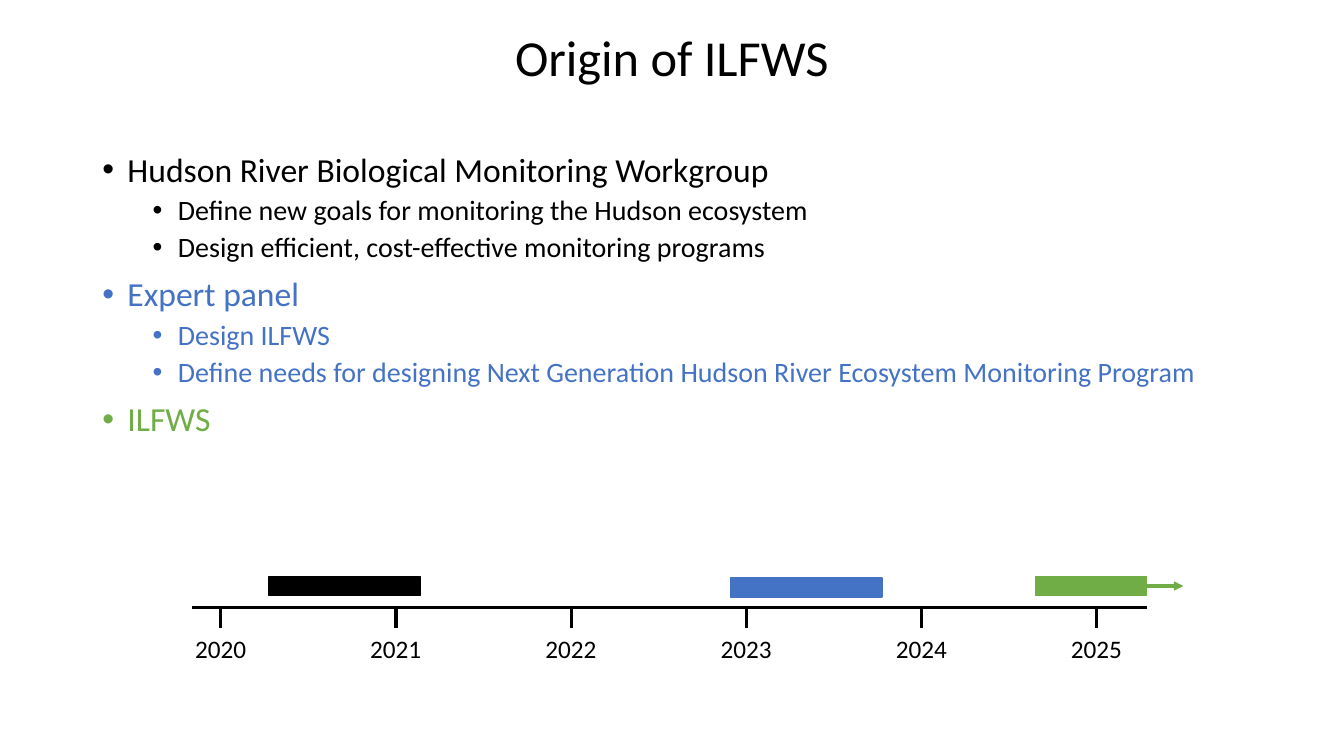
from lxml import etree
from pptx import Presentation
from pptx.dml.color import RGBColor
from pptx.enum.shapes import MSO_CONNECTOR, MSO_SHAPE
from pptx.enum.text import MSO_ANCHOR, MSO_AUTO_SIZE, PP_ALIGN
from pptx.oxml.ns import qn
from pptx.util import Pt

LINE, RECT = MSO_CONNECTOR.STRAIGHT, MSO_SHAPE.RECTANGLE
MIDDLE, CENTER = MSO_ANCHOR.MIDDLE, PP_ALIGN.CENTER
GROW = MSO_AUTO_SIZE.SHAPE_TO_FIT_TEXT
BLACK, BLUE, GREEN = "000000", "4472C4", "70AD47"
RIGHT = 3

ITEMS = [
    (0, BLACK, "Hudson River Biological Monitoring Workgroup"),
    (1, BLACK, "Define new goals for monitoring the Hudson ecosystem"),
    (1, BLACK, "Design efficient, cost-effective monitoring programs"),
    (0, BLUE, "Expert panel"),
    (1, BLUE, "Design ILFWS"),
    (1, BLUE, "Define needs for designing Next Generation Hudson River "
              "Ecosystem Monitoring Program"),
    (0, GREEN, "ILFWS"),
]
LEVELS = [
    {"size": 24, "space": 10, "left": 18},
    {"size": 20, "space": 5, "left": 54},
]
AXIS_Y, TICK = 434.2, 14.4
FIRST_X, YEAR_W = 157.7, 125.14
YEARS = range(2020, 2026)


def color(code):
    return RGBColor.from_string(code)


def apply(item, form):
    for name, value in form.items():
        setattr(item, name, value)


def add_box(slide, x, y, w, h, **form):
    """Add a text box; form holds text frame attributes."""
    frame = slide.shapes.add_textbox(Pt(x), Pt(y), Pt(w), Pt(h)).text_frame
    apply(frame, {"word_wrap": True, **form})
    return frame


def write(para, text, size, code=BLACK, **form):
    """Fill a paragraph; form holds paragraph attributes."""
    run = para.add_run()
    run.text = text
    apply(run.font, {"name": "Calibri", "size": Pt(size)})
    run.font.color.rgb = color(code)
    apply(para, form)


def add_bullet(para, left):
    props = para._p.get_or_add_pPr()
    props.set("marL", str(Pt(left)))
    props.set("indent", str(-Pt(18)))
    font = etree.SubElement(props, qn("a:buFont"))
    font.set("typeface", "Arial")
    etree.SubElement(props, qn("a:buChar")).set("char", "•")


def add_list(slide):
    frame = add_box(slide, 66, 105.8, 828, 230.4)
    for i, (level, code, text) in enumerate(ITEMS):
        para = frame.add_paragraph() if i else frame.paragraphs[0]
        form = LEVELS[level]
        write(para, text, form["size"], code, level=level,
              line_spacing=0.9, space_before=Pt(form["space"]))
        add_bullet(para, form["left"])


def add_line(slide, x1, y1, x2, y2, code=BLACK):
    line = slide.shapes.add_connector(LINE, Pt(x1), Pt(y1), Pt(x2), Pt(y2))
    line.line.width = Pt(2.25)
    line.line.color.rgb = color(code)
    etree.SubElement(line._element.spPr, qn("a:effectLst"))
    return line


def add_bar(slide, x, y, w, code):
    bar = slide.shapes.add_shape(RECT, Pt(x), Pt(y), Pt(w), Pt(13.6))
    bar.shadow.inherit = False
    bar.fill.solid()
    bar.fill.fore_color.rgb = color(code)
    bar.line.color.rgb = color(code)
    bar.line.width = Pt(1)
    return bar


def add_axis(slide):
    add_line(slide, 137.5, AXIS_Y, 819.4, AXIS_Y)
    for i, year in enumerate(YEARS):
        x, low = FIRST_X + i * YEAR_W, AXIS_Y + TICK
        add_line(slide, x, low, x, AXIS_Y)
        frame = add_box(slide, x - 25.5, low, 51, 29,
                        word_wrap=False, auto_size=GROW)
        write(frame.paragraphs[0], str(year), 18)


def main():
    deck = Presentation()
    apply(deck, {"slide_width": Pt(960), "slide_height": Pt(540)})
    slide = deck.slides.add_slide(deck.slide_layouts[6])

    title = add_box(slide, 66, 11.5, 828, 63.4, vertical_anchor=MIDDLE)
    write(title.paragraphs[0], "Origin of ILFWS", 36,
          alignment=CENTER, line_spacing=0.9)
    add_list(slide)
    add_axis(slide)

    add_bar(slide, 192.2, 411.8, 108, BLACK)
    add_bar(slide, 522, 412.8, 108, BLUE)
    last = add_bar(slide, 739.6, 411.8, 79.2, GREEN)
    arrow = add_line(slide, 818.8, 418.6, 845.3, 418.6, GREEN)
    arrow.begin_connect(last, RIGHT)
    tail = etree.SubElement(arrow.line._get_or_add_ln(), qn("a:tailEnd"))
    tail.set("type", "triangle")
    deck.save("out.pptx")


if __name__ == "__main__":
    main()
